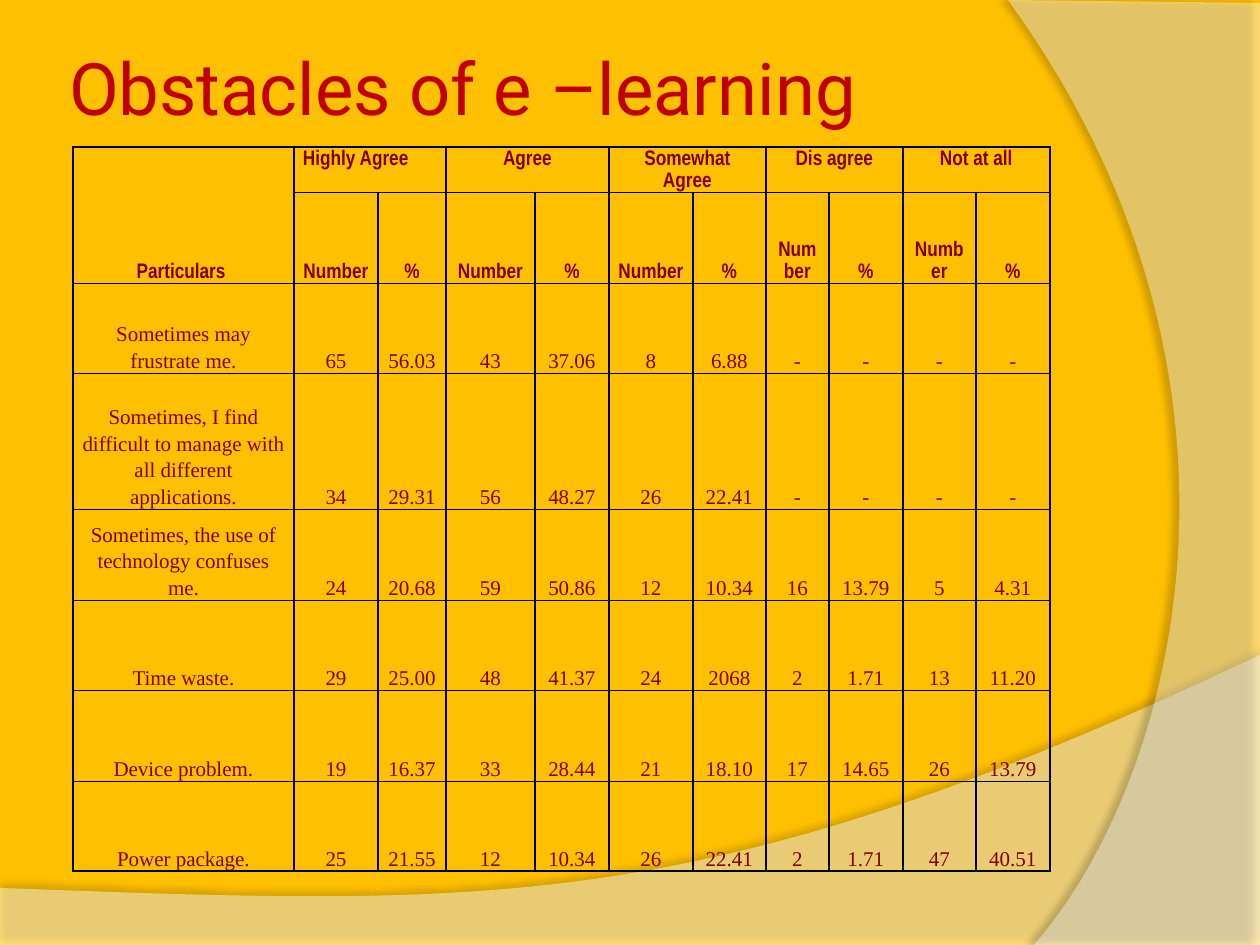
from lxml.etree import SubElement
from pptx import Presentation
from pptx.dml.color import RGBColor as Color
from pptx.enum.text import MSO_ANCHOR as Anchor, PP_ALIGN as Align
from pptx.oxml.ns import qn
from pptx.util import Pt

COLORS = {"back": "FFC000", "wave": "FFFFFF", "title": "C00000", "text": "800000", "line": "000000"}
EMU_PER_PX = 914400 / 126
WIDTH, HEIGHT = 1260, 945

COLUMNS = [221, 84, 68, 89, 74, 84, 73, 63, 74, 73, 74]
ROWS = [45, 91, 90, 136, 91, 90, 91, 90]
ANSWERS = ["Highly Agree", "Agree", "Somewhat Agree", "Dis agree", "Not at all"]
OBSTACLES = [
    ["Sometimes may frustrate me.", "65", "56.03", "43", "37.06", "8", "6.88", "-", "-", "-", "-"],
    ["Sometimes, I find difficult to manage with all different applications.",
     "34", "29.31", "56", "48.27", "26", "22.41", "-", "-", "-", "-"],
    ["Sometimes, the use of technology confuses me.",
     "24", "20.68", "59", "50.86", "12", "10.34", "16", "13.79", "5", "4.31"],
    ["Time waste.", "29", "25.00", "48", "41.37", "24", "2068", "2", "1.71", "13", "11.20"],
    ["Device problem.", "19", "16.37", "33", "28.44", "21", "18.10", "17", "14.65", "26", "13.79"],
    ["Power package.", "25", "21.55", "12", "10.34", "26", "22.41", "2", "1.71", "47", "40.51"],
]


def px(value):
    return round(value * EMU_PER_PX)


def rgb(name):
    return Color.from_string(COLORS[name])


def set_all(target, values):
    for name, value in values.items():
        setattr(target, name, value)


def add_tag(parent, tag, **attributes):
    return SubElement(parent, qn(tag), {key: str(value) for key, value in attributes.items()})


def bezier(start, first, second, end, steps=60):
    points = []
    for step in range(steps + 1):
        t = step / steps
        weights = ((1 - t) ** 3, 3 * t * (1 - t) ** 2, 3 * t * t * (1 - t), t ** 3)
        corners = (start, first, second, end)
        points.append(tuple(sum(w * c[axis] for w, c in zip(weights, corners)) for axis in (0, 1)))
    return points


class SlideBuilder:
    heading = {"name": "Arial Narrow", "size": Pt(12), "bold": True}
    body = {"name": "Times New Roman", "size": Pt(12), "bold": False}
    title_font = {"name": "Roboto", "size": Pt(41.4), "bold": False}

    def __init__(self, page):
        self.page = page
        fill = page.background.fill
        fill.solid()
        fill.fore_color.rgb = rgb("back")

    def put_text(self, frame, text, font, color, align):
        para = frame.paragraphs[0]
        para.alignment = align
        span = para.add_run()
        span.text = text
        set_all(span.font, font)
        span.font.color.rgb = rgb(color)
        return para

    def title(self, text, left, top, width, height):
        box = self.page.shapes.title
        set_all(box, {"left": px(left), "top": px(top), "width": px(width), "height": px(height)})
        frame = box.text_frame
        inset = px(6)
        set_all(frame, {"word_wrap": True, "vertical_anchor": Anchor.MIDDLE, "margin_left": inset,
                        "margin_right": inset, "margin_top": inset, "margin_bottom": inset})
        self.put_text(frame, text, self.title_font, "title", Align.LEFT)

    def wave(self, points, opacity, shade, distance, degrees):
        start, *others = [(px(x), px(y)) for x, y in points]
        builder = self.page.shapes.build_freeform(*start, scale=1.0)
        builder.add_line_segments(others, close=True)
        shape = builder.convert_to_shape()
        shape.shadow.inherit = False
        shape.line.fill.background()
        shape.fill.solid()
        shape.fill.fore_color.rgb = rgb("wave")
        properties = shape.element.spPr
        color = properties.find(qn("a:solidFill")).find(qn("a:srgbClr"))
        add_tag(color, "a:alpha", val=opacity * 1000)
        shadow = add_tag(properties.find(qn("a:effectLst")), "a:outerShdw", blurRad=Pt(4),
                         dist=Pt(distance), dir=degrees * 60000, algn="ctr", rotWithShape=0)
        add_tag(add_tag(shadow, "a:srgbClr", val=COLORS["line"]), "a:alpha", val=shade * 1000)

    def table(self, left, top, columns, rows):
        holder = self.page.shapes.add_table(
            len(rows), len(columns), px(left), px(top), px(sum(columns)), px(sum(rows)))
        table = holder.table
        set_all(table, {"first_row": False, "horz_banding": False})
        for column, width in zip(table.columns, columns):
            column.width = px(width)
        for row, height in zip(table.rows, rows):
            row.height = px(height)
        for cell in table.iter_cells():
            set_all(cell, {"margin_left": px(9), "margin_right": px(9),
                           "margin_top": 0, "margin_bottom": 0})
            self.border(cell)
            cell.fill.background()
        return table

    def border(self, cell):
        properties = cell._tc.get_or_add_tcPr()
        for side in ("a:lnL", "a:lnR", "a:lnT", "a:lnB"):
            line = add_tag(properties, side, w=Pt(1))
            add_tag(add_tag(line, "a:solidFill"), "a:srgbClr", val=COLORS["line"])

    def cell(self, cell, text, font, align=Align.CENTER, anchor=Anchor.BOTTOM):
        cell.vertical_anchor = anchor
        self.put_text(cell.text_frame, text, font, "text", align).line_spacing = 1.15


def main():
    deck = Presentation()
    deck.slide_width, deck.slide_height = px(WIDTH), px(HEIGHT)
    slide = SlideBuilder(deck.slides.add_slide(deck.slide_layouts[5]))

    bottom_edge = bezier((WIDTH, 655), (704, 919), (493, 906), (0, 888))
    slide.wave([(0, HEIGHT), (WIDTH, HEIGHT)] + bottom_edge, 45, 35, 3.5, 270)
    right_edge = bezier((1034, HEIGHT), (1178, 780), (1283, 378), (1008, 0))
    slide.wave([(WIDTH, 3), (WIDTH, HEIGHT)] + right_edge, 40, 45, 4, 180)

    slide.title("Obstacles of e –learning", 63, 38, 1029, 98)

    table = slide.table(73, 147, COLUMNS, ROWS)
    table.cell(0, 0).merge(table.cell(1, 0))
    slide.cell(table.cell(0, 0), "Particulars ", slide.heading)
    for index, answer in enumerate(ANSWERS):
        first = 1 + 2 * index
        table.cell(0, first).merge(table.cell(0, first + 1))
        align = Align.CENTER if index else Align.LEFT
        slide.cell(table.cell(0, first), answer, slide.heading, align, Anchor.TOP)
        for offset, label in enumerate(("Number", "%")):
            slide.cell(table.cell(1, first + offset), label, slide.heading)
    for row, values in enumerate(OBSTACLES, 2):
        for column, value in enumerate(values):
            slide.cell(table.cell(row, column), value, slide.body)

    deck.save("out.pptx")


if __name__ == "__main__":
    main()
